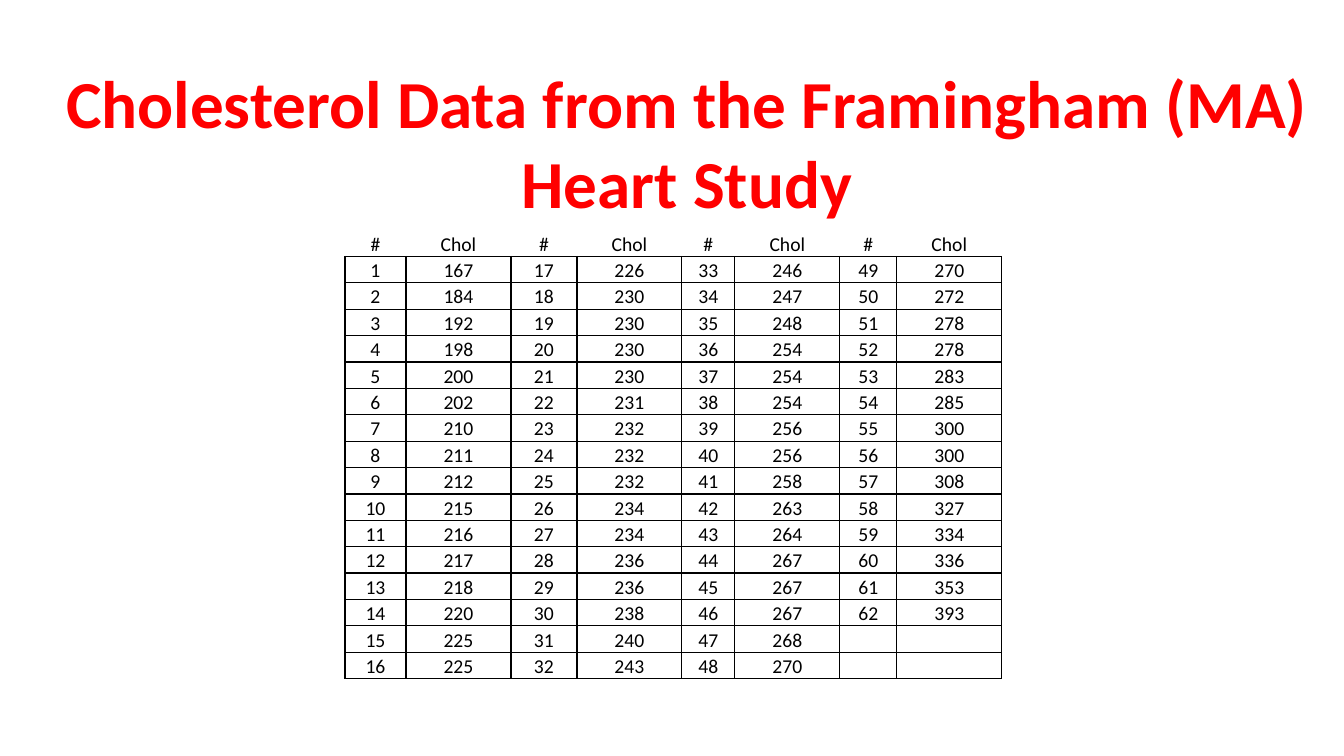
"""Builds the slide with the table of Framingham cholesterol data."""
from lxml import etree
from pptx import Presentation
from pptx import util as u
from pptx.dml.color import RGBColor
from pptx.enum import text
from pptx.oxml.ns import qn

THEME = {
    "font": "Calibri",
    "title": "FF0000",
    "ink": "000000",
    "paper": "FFFFFF",
    "head": 48,
    "body": 14,
    "rule": 1,
}
CHOL = [
    167, 184, 192, 198, 200, 202, 210, 211, 212, 215, 216, 217, 218, 220, 225, 225,
    226, 230, 230, 230, 230, 231, 232, 232, 232, 234, 234, 236, 236, 238, 240, 243,
    246, 247, 248, 254, 254, 254, 256, 256, 258, 263, 264, 267, 267, 267, 268, 270,
    270, 272, 278, 278, 283, 285, 300, 300, 308, 327, 334, 336, 353, 393,
]
DEPTH = 16
WIDTHS = [61, 105, 66, 105, 53, 105, 57, 105]


def px(n):
    return u.Emu(round(n * 914400 / 100.8))


def border(cell, colors):
    props = cell._tc.get_or_add_tcPr()
    for i, (side, color) in enumerate(zip("LRTB", colors)):
        line = etree.Element(qn(f"a:ln{side}"), w=str(u.Pt(THEME["rule"])))
        fill = etree.SubElement(line, qn("a:solidFill"))
        etree.SubElement(fill, qn("a:srgbClr"), val=color)
        props.insert(i, line)


deck = Presentation()
deck.slide_width, deck.slide_height = px(1344), px(756)
slide = deck.slides.add_slide(deck.slide_layouts[5])

title = slide.shapes.title
title.left, title.top, title.width, title.height = map(px, (50, 56, 1274, 173))
frame = title.text_frame
frame.text = "Cholesterol Data from the Framingham (MA) Heart Study"
frame.word_wrap = True
frame.auto_size = text.MSO_AUTO_SIZE.SHAPE_TO_FIT_TEXT
frame.vertical_anchor = text.MSO_ANCHOR.TOP
para = frame.paragraphs[0]
para.alignment = text.PP_ALIGN.CENTER
font = para.runs[0].font
font.name, font.size, font.bold = THEME["font"], u.Pt(THEME["head"]), True
font.color.rgb = RGBColor.from_string(THEME["title"])

rows = [["#", "Chol"] * 4]
for r in range(DEPTH):
    row = []
    for n in range(r, DEPTH * 4, DEPTH):
        row += [str(n + 1), str(CHOL[n])] if n < len(CHOL) else ["", ""]
    rows.append(row)

table = slide.shapes.add_table(
    len(rows), len(WIDTHS), px(345), px(230), px(sum(WIDTHS)), px(449)).table
table.first_row = table.horz_banding = False
for col, width in zip(table.columns, WIDTHS):
    col.width = px(width)

ink, paper = THEME["ink"], THEME["paper"]
for r, row in enumerate(rows):
    table.rows[r].height = px(449) // len(rows)
    for c, value in enumerate(row):
        cell = table.cell(r, c)
        cell.text = value
        cell.fill.background()
        cell.vertical_anchor = text.MSO_ANCHOR.BOTTOM
        cell.margin_left = cell.margin_right = cell.margin_top = px(1)
        cell.margin_bottom = 0
        border(cell, [ink] * 4 if r else [paper, paper, paper, ink])
        para = cell.text_frame.paragraphs[0]
        para.alignment = text.PP_ALIGN.CENTER
        for run in para.runs:
            run.font.name, run.font.size = THEME["font"], u.Pt(THEME["body"])
            run.font.color.rgb = RGBColor.from_string(ink)
        if not value:
            etree.SubElement(para._p, qn("a:endParaRPr"), sz=str(THEME["body"] * 100))

deck.save("out.pptx")
